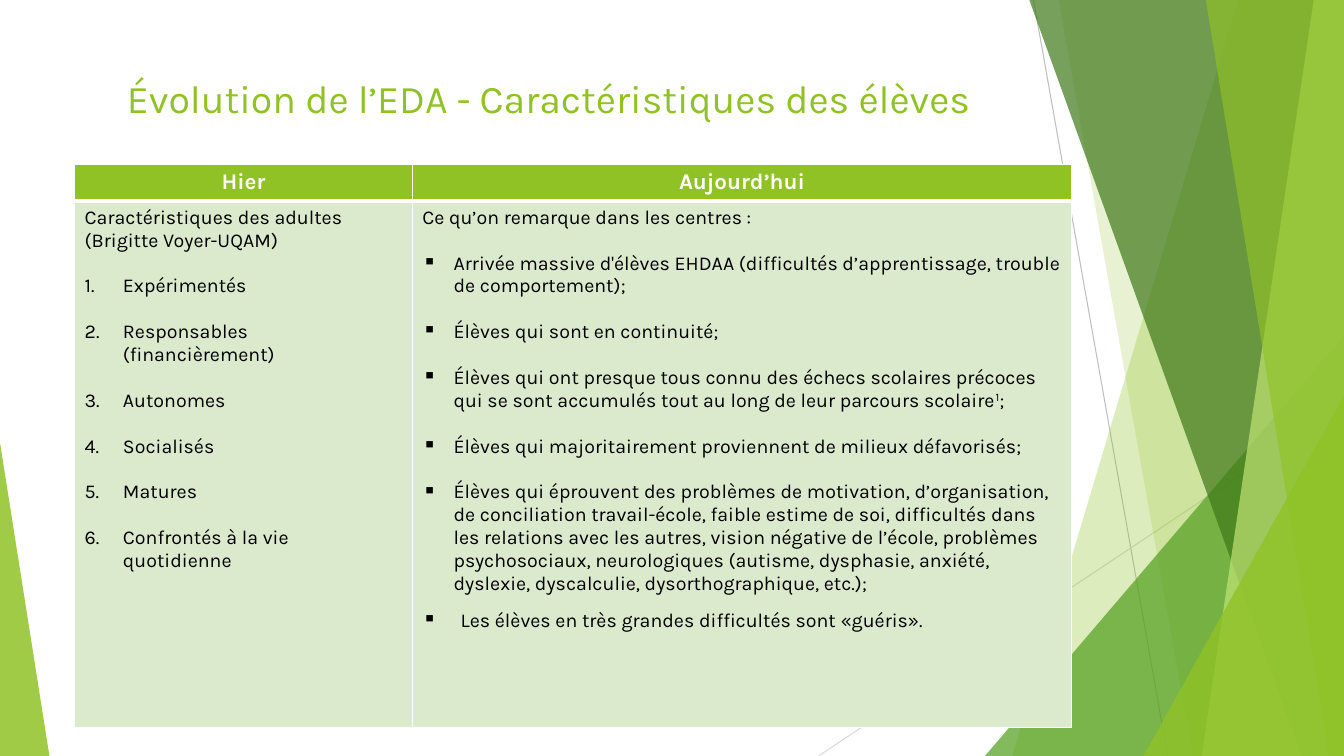
from lxml import etree
from pptx import Presentation
from pptx.dml.color import RGBColor
from pptx.enum.shapes import MSO_CONNECTOR, MSO_SHAPE
from pptx.enum.text import MSO_ANCHOR, PP_ALIGN
from pptx.oxml.ns import qn
from pptx.util import Inches, Pt

STRAIGHT = MSO_CONNECTOR.STRAIGHT
TRIANGLE = MSO_SHAPE.ISOSCELES_TRIANGLE
MIDDLE = MSO_ANCHOR.MIDDLE
LEFT, CENTER = PP_ALIGN.LEFT, PP_ALIGN.CENTER

COLORS = {
    "lime": "90C226", "green": "54A021", "forest": "3F7819", "pale": "C0E474",
    "cell": "DBE9CD", "white": "FFFFFF", "black": "000000",
    "gray": "BFBFBF", "silver": "D9D9D9",
}
FONT = "Karla"
LINE_GAP = 16.4  # one line of 14-point text

NUMBER = ("buAutoNum", {"type": "arabicPeriod"})
SQUARE = ("buChar", {"char": "▪"})

YESTERDAY_INTRO = "Caractéristiques des adultes (Brigitte Voyer-UQAM)"
YESTERDAY = [
    "Expérimentés", "Responsables (financièrement)", "Autonomes",
    "Socialisés", "Matures", "Confrontés à la vie quotidienne",
]
TODAY_INTRO = "Ce qu’on remarque dans les centres :"
TODAY = [
    "Arrivée massive d'élèves EHDAA (difficultés d’apprentissage, trouble "
    "de comportement);",
    "Élèves qui sont en continuité;",
    "Élèves qui ont presque tous connu des échecs scolaires précoces qui se "
    "sont accumulés tout au long de leur parcours scolaire^1^; ",
    "Élèves qui majoritairement proviennent de milieux défavorisés;",
    "Élèves qui éprouvent des problèmes de motivation, d’organisation, de "
    "conciliation travail-école, faible estime de soi, difficultés dans les "
    "relations avec les autres, vision négative de l’école, problèmes "
    "psychosociaux, neurologiques (autisme, dysphasie, anxiété, dyslexie, "
    "dyscalculie, dysorthographique, etc.);",
]
TODAY_LAST = "Les élèves en très grandes difficultés sont «guéris»."


class Page:
    """Draws on one slide; lengths are percentages of its width and height."""

    def __init__(self, deck):
        self.width, self.height = deck.slide_width, deck.slide_height
        self.shapes = deck.slides.add_slide(deck.slide_layouts[6]).shapes

    def x(self, share):
        return round(self.width * share / 100)

    def y(self, share):
        return round(self.height * share / 100)

    def area(self, left, top, width, height):
        return self.x(left), self.y(top), self.x(width), self.y(height)

    def paint(self, shape, color, opacity):
        shape.shadow.inherit = False
        shape.line.fill.background()
        shape.fill.solid()
        shape.fill.fore_color.rgb = RGBColor.from_string(COLORS[color])
        rgb = shape._element.spPr.find(qn("a:solidFill")).find(qn("a:srgbClr"))
        etree.SubElement(rgb, qn("a:alpha"), val=str(opacity * 1000))

    def line(self, start, end, color):
        line = self.shapes.add_connector(
            STRAIGHT, self.x(start[0]), self.y(start[1]), self.x(end[0]), self.y(end[1]))
        line.line.color.rgb = RGBColor.from_string(COLORS[color])
        line.line.width = Pt(0.75)
        etree.SubElement(line._element.spPr, qn("a:effectLst"))

    def facet(self, top_left, bottom_left, color, opacity):
        """Fill from a slanted left edge to the right side of the slide."""
        outline = self.shapes.build_freeform(self.x(top_left), 0)
        outline.add_line_segments([
            (self.width, 0), (self.width, self.height), (self.x(bottom_left), self.height)])
        self.paint(outline.convert_to_shape(), color, opacity)

    def triangle(self, left, top, width, apex, color, opacity):
        """Stand a triangle on the bottom edge of the slide."""
        shape = self.shapes.add_shape(TRIANGLE, *self.area(left, top, width, 100 - top))
        shape.adjustments[0] = apex
        self.paint(shape, color, opacity)

    def text(self, para, text, size, color, align=LEFT, bold=False,
             bullet=None, indent=0.0, before=0.0):
        """Fill a paragraph; text between carets is superscript."""
        para.alignment = align
        para.space_before = Pt(before)
        if bullet:
            tag, attributes = bullet
            properties = para._p.get_or_add_pPr()
            properties.set("marL", str(Inches(indent)))
            properties.set("indent", str(-Inches(indent)))
            etree.SubElement(properties, qn("a:" + tag), attributes)
        para.font.name, para.font.size, para.font.bold = FONT, Pt(size), bold
        para.font.color.rgb = RGBColor.from_string(COLORS[color])
        for position, part in enumerate(text.split("^")):
            span = para.add_run()
            span.text = part
            if position % 2:
                span._r.get_or_add_rPr().set("baseline", "30000")

    def title(self, text, *area):
        frame = self.shapes.add_textbox(*self.area(*area)).text_frame
        frame.word_wrap = True
        frame.vertical_anchor = MIDDLE
        self.text(frame.paragraphs[0], text, 28, "lime", CENTER)

    def table(self, left, top, widths, heights):
        area = self.area(left, top, sum(widths), sum(heights))
        table = self.shapes.add_table(len(heights), len(widths), *area).table
        for column, width in zip(table.columns, widths):
            column.width = self.x(width)
        for row, height in zip(table.rows, heights):
            row.height = self.y(height)
        return table

    def cell(self, cell, color, top=1, bottom=1):
        """Fill a cell and give it white borders."""
        for side, width in {"L": 1, "R": 1, "T": top, "B": bottom}.items():
            border = etree.SubElement(
                cell._tc.get_or_add_tcPr(), qn("a:ln" + side), w=str(Pt(width)))
            fill = etree.SubElement(border, qn("a:solidFill"))
            etree.SubElement(fill, qn("a:srgbClr"), val=COLORS["white"])
        cell.fill.solid()
        cell.fill.fore_color.rgb = RGBColor.from_string(COLORS[color])
        return cell.text_frame

    def bullets(self, frame, items, bullet, indent, before=LINE_GAP):
        for item in items:
            self.text(frame.add_paragraph(), item, 14, "black",
                      bullet=bullet, indent=indent, before=before)


def main():
    deck = Presentation()
    deck.slide_width, deck.slide_height = Inches(13.33), Inches(7.5)
    page = Page(deck)

    page.line((76.9, 0), (86.88, 100), "gray")
    page.line((100, 53.7), (60.9, 100), "silver")
    page.facet(92.12, 75.32, "lime", 30)
    page.facet(78.77, 88.75, "lime", 20)
    page.triangle(73.29, 44.4, 26.71, 1, "green", 72)
    page.facet(76.59, 96.85, "forest", 70)
    page.facet(97.75, 89.42, "pale", 70)
    page.facet(89.72, 98.87, "lime", 65)
    page.triangle(85.07, 52.4, 14.93, 1, "lime", 80)
    page.triangle(0, 58.53, 3.68, 0, "lime", 85)

    page.title("Évolution de l’EDA - Caractéristiques des élèves", 5.55, 8.93, 70.52, 8.13)

    table = page.table(5.55, 21.73, [25.13, 49.06], [4.67, 69.6])
    for column, heading in enumerate(["Hier", "Aujourd’hui"]):
        frame = page.cell(table.cell(0, column), "lime", bottom=3)
        page.text(frame.paragraphs[0], heading, 16, "white", CENTER, bold=True)

    yesterday, today = [page.cell(table.cell(1, column), "cell", top=3) for column in range(2)]
    page.text(yesterday.paragraphs[0], YESTERDAY_INTRO, 14, "black")
    page.bullets(yesterday, YESTERDAY, NUMBER, 0.38)
    page.text(today.paragraphs[0], TODAY_INTRO, 14, "black")
    page.bullets(today, TODAY, SQUARE, 0.31)
    page.bullets(today, [TODAY_LAST], SQUARE, 0.38, before=10)

    deck.save("out.pptx")


if __name__ == "__main__":
    main()
